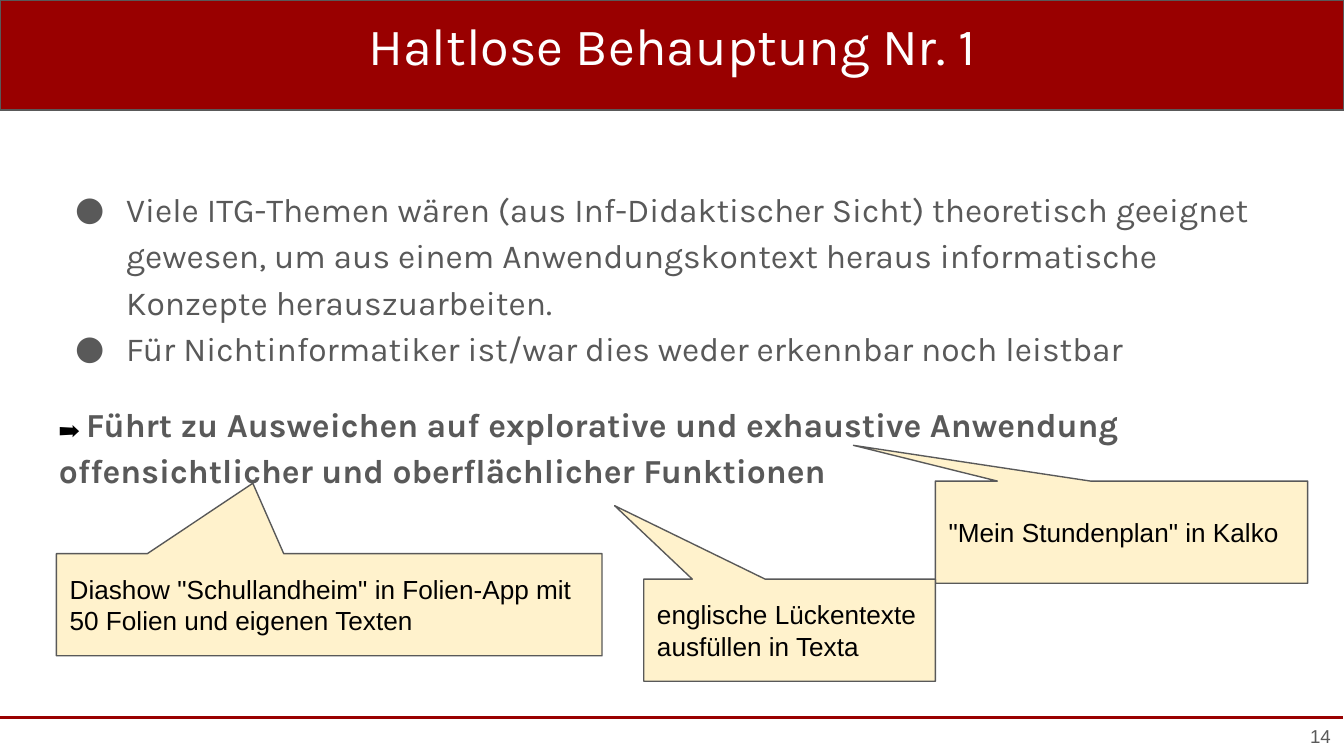
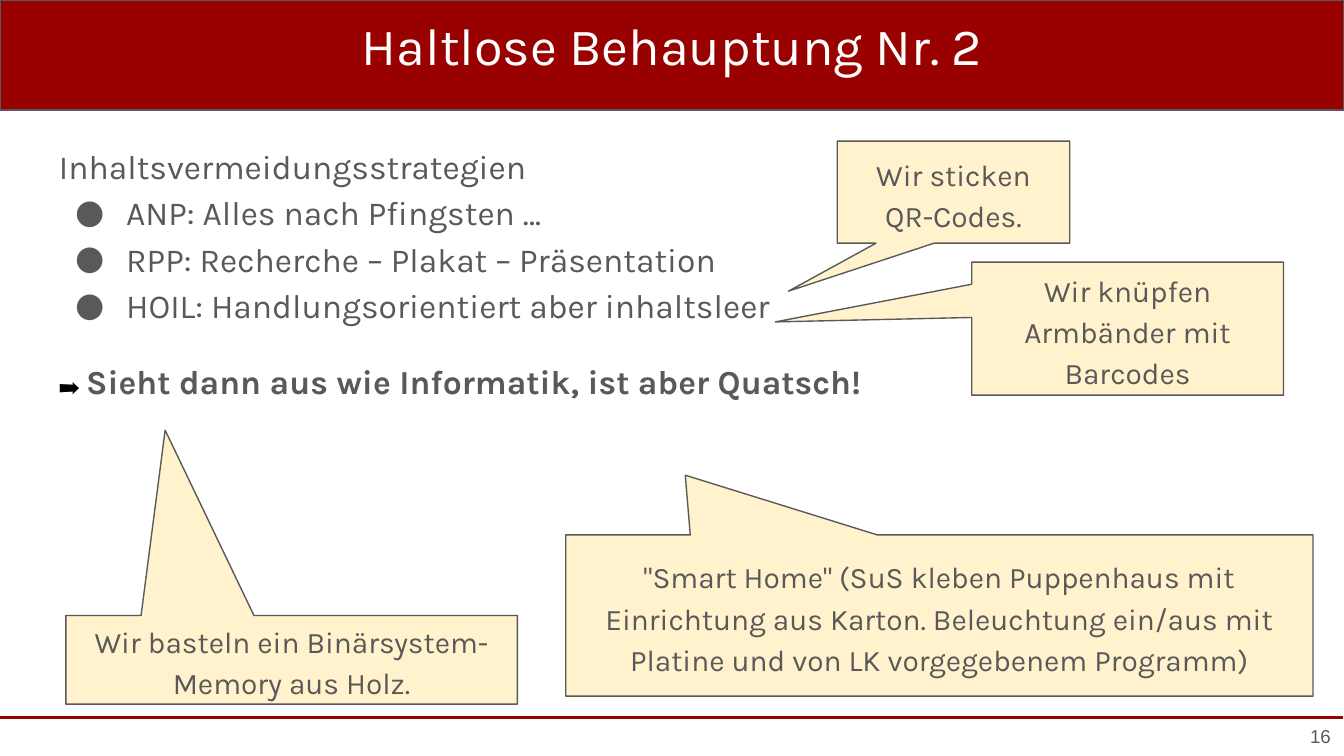
import lxml.etree
import pptx
import pptx.dml.color
import pptx.enum.shapes
import pptx.enum.text
import pptx.oxml.ns
import pptx.util

Inches = pptx.util.Inches
Pt = pptx.util.Pt
RGBColor = pptx.dml.color.RGBColor
Align = pptx.enum.text.PP_ALIGN
Anchor = pptx.enum.text.MSO_ANCHOR
Shape = pptx.enum.shapes.MSO_SHAPE
qn = pptx.oxml.ns.qn

RED = RGBColor(0x99, 0x00, 0x00)
GRAY = RGBColor(0x59, 0x59, 0x59)
CREAM = RGBColor(0xFF, 0xF2, 0xCC)
BLACK = RGBColor(0x00, 0x00, 0x00)
WHITE = RGBColor(0xFF, 0xFF, 0xFF)

HEADING_FONT = "Karla"
PLAIN_FONT = "Arial"
WIDTH = 10
HEIGHT = WIDTH * 9 / 16
BAND_HEIGHT = 0.82
FOOTER_TOP = 5.34
LINE_SPACING = 1.15


class Deck:
    """Holds the shared style and the slide being filled."""

    def __init__(self):
        self.presentation = pptx.Presentation()
        self.presentation.slide_width = Inches(WIDTH)
        self.presentation.slide_height = Inches(HEIGHT)
        self.slide = None

    def start_slide(self, title, number):
        self.slide = self.presentation.slides.add_slide(self.presentation.slide_layouts[6])
        band = (0, 0, WIDTH, BAND_HEIGHT)
        self.filled_shape(Shape.RECTANGLE, band, RED)
        self.footer_rule()
        heading = self.text_frame(band)
        heading.paragraphs[0].alignment = Align.CENTER
        self.run(heading.paragraphs[0], title, 28, HEADING_FONT, WHITE)
        page = self.text_frame((9.27, FOOTER_TOP, 0.73, 0.28), Anchor.MIDDLE)
        page.paragraphs[0].alignment = Align.RIGHT
        self.run(page.paragraphs[0], number, 10, PLAIN_FONT, GRAY)

    def filled_shape(self, kind, box, fill):
        shape = self.slide.shapes.add_shape(kind, *map(Inches, box))
        shape.shadow.inherit = False
        shape.fill.solid()
        shape.fill.fore_color.rgb = fill
        shape.line.color.rgb = GRAY
        shape.line.width = Pt(0.75)
        return shape

    def footer_rule(self):
        rule = self.slide.shapes.add_connector(
            pptx.enum.shapes.MSO_CONNECTOR.STRAIGHT,
            Inches(0), Inches(FOOTER_TOP), Inches(9.99), Inches(FOOTER_TOP))
        rule.line.color.rgb = RED
        rule.line.width = Pt(1.5)
        lxml.etree.SubElement(rule._element.spPr, qn("a:effectLst"))

    def prepare(self, frame, anchor):
        frame.word_wrap = True
        frame.vertical_anchor = anchor
        frame.margin_left = frame.margin_right = Inches(0.1)
        frame.margin_top = frame.margin_bottom = Inches(0.1)
        return frame

    def text_frame(self, box, anchor=Anchor.TOP):
        return self.prepare(self.slide.shapes.add_textbox(*map(Inches, box)).text_frame, anchor)

    def run(self, paragraph, text, size, font, color, bold=False):
        run = paragraph.add_run()
        run.text = text
        run.font.size = Pt(size)
        run.font.name = font
        run.font.color.rgb = color
        run.font.bold = bold

    def body(self, box, bullets, conclusion, intro=None, space_after=0):
        """Add an optional opening line, bullets and a bold line with an arrow."""
        frame = self.text_frame(box)
        lines = ([intro] if intro else []) + bullets
        for index, line in enumerate(lines):
            paragraph = frame.paragraphs[0] if index == 0 else frame.add_paragraph()
            paragraph.line_spacing = LINE_SPACING
            if line != intro:
                self.bullet(paragraph)
            self.run(paragraph, line, 18, HEADING_FONT, GRAY)
        closing = frame.add_paragraph()
        closing.line_spacing = LINE_SPACING
        closing.space_before = Pt(16)
        closing.space_after = Pt(space_after)
        self.run(closing, "➡️ ", 11, PLAIN_FONT, BLACK)
        self.run(closing, conclusion, 18, HEADING_FONT, GRAY, bold=True)

    def bullet(self, paragraph):
        properties = paragraph._p.get_or_add_pPr()
        properties.set("marL", str(Inches(0.5)))
        properties.set("indent", str(Inches(-0.38)))
        color = lxml.etree.SubElement(properties, qn("a:buClr"))
        lxml.etree.SubElement(color, qn("a:srgbClr")).set("val", str(GRAY))
        lxml.etree.SubElement(properties, qn("a:buFont")).set("typeface", HEADING_FONT)
        lxml.etree.SubElement(properties, qn("a:buChar")).set("char", "●")

    def callout(self, box, tip):
        """Add a square-cornered callout; tip is relative to its centre and size."""
        shape = self.filled_shape(Shape.ROUNDED_RECTANGULAR_CALLOUT, box, CREAM)
        for index, value in enumerate((*tip, 0)):
            shape.adjustments[index] = value
        return self.prepare(shape.text_frame, Anchor.MIDDLE).paragraphs[0]

    def example(self, box, tip, *lines):
        paragraph = self.callout(box, tip)
        paragraph.alignment = Align.LEFT
        for index, line in enumerate(lines):
            if index:
                paragraph.add_line_break()
            self.run(paragraph, line, 14, PLAIN_FONT, BLACK)

    def quote(self, box, tip, text):
        paragraph = self.callout(box, tip)
        paragraph.alignment = Align.CENTER
        paragraph.line_spacing = LINE_SPACING
        paragraph.space_after = Pt(16)
        self.run(paragraph, text, 16, HEADING_FONT, GRAY)


def first_claim(deck):
    deck.start_slide("Haltlose Behauptung Nr. 1", "14")
    deck.body(
        (0.34, 1.26, 9.32, 3.74),
        ["Viele ITG-Themen wären (aus Inf-Didaktischer Sicht) theoretisch geeignet "
         "gewesen, um aus einem Anwendungskontext heraus informatische Konzepte "
         "herauszuarbeiten.",
         "Für Nichtinformatiker ist/war dies weder erkennbar noch leistbar"],
        "Führt zu Ausweichen auf explorative und exhaustive Anwendung "
        "offensichtlicher und oberflächlicher Funktionen")
    deck.example((0.42, 4.12, 4.06, 0.76), (-0.14, -1.19),
                 'Diashow "Schullandheim" in Folien-App mit',
                 "50 Folien und eigenen Texten")
    deck.example((6.96, 3.58, 2.77, 0.76), (-0.72, -0.85), '"Mein Stundenplan" in Kalko')
    deck.example((4.79, 4.31, 2.17, 0.76), (-0.6, -1.22),
                 "englische Lückentexte ausfüllen in Texta")


def second_claim(deck):
    deck.start_slide("Haltlose Behauptung Nr. 2", "16")
    deck.body(
        (0.34, 0.94, 9.32, 1.55),
        ["ANP: Alles nach Pfingsten …",
         "RPP: Recherche – Plakat – Präsentation",
         "HOIL: Handlungsorientiert aber inhaltsleer"],
        "Sieht dann aus wie Informatik, ist aber Quatsch!",
        intro="Inhaltsvermeidungsstrategien", space_after=16)
    deck.quote((4.21, 3.98, 5.56, 1.2), (-0.34, -0.87),
               '"Smart Home" (SuS kleben Puppenhaus mit Einrichtung aus Karton. '
               "Beleuchtung ein/aus mit Platine und von LK vorgegebenem Programm)")
    deck.quote((6.23, 1.05, 1.73, 0.76), (-0.71, 0.97), "Wir sticken QR-Codes.")
    deck.quote((7.23, 1.95, 2.32, 0.99), (-1.13, -0.05), "Wir knüpfen Armbänder mit Barcodes")
    deck.quote((0.49, 4.58, 3.36, 0.66), (-0.28, -2.59),
               "Wir basteln ein Binärsystem- Memory aus Holz.")


def main():
    deck = Deck()
    first_claim(deck)
    second_claim(deck)
    deck.presentation.save("out.pptx")


if __name__ == "__main__":
    main()
